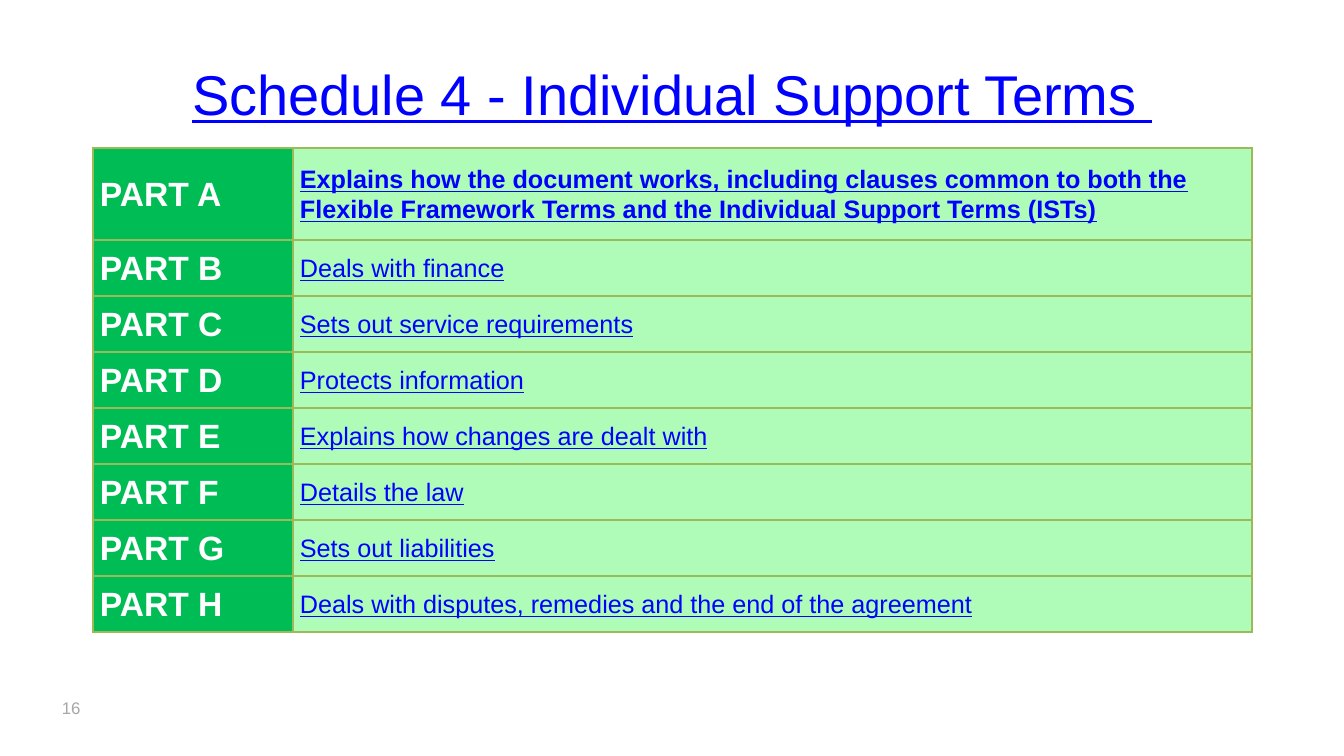
from lxml import etree
from pptx import Presentation
from pptx.dml.color import RGBColor
from pptx.enum.text import MSO_ANCHOR, PP_ALIGN
from pptx.oxml.ns import qn
from pptx.util import Pt

MIDDLE, TOP = MSO_ANCHOR.MIDDLE, MSO_ANCHOR.TOP
LEFT, CENTER = PP_ALIGN.LEFT, PP_ALIGN.CENTER

TITLE = "Schedule 4 - Individual Support Terms "
PAGE = "16"
PARTS = [
    ("PART A", "Explains how the document works, including clauses common to both "
     "the Flexible Framework Terms and the Individual Support Terms (ISTs)"),
    ("PART B", "Deals with finance"),
    ("PART C", "Sets out service requirements"),
    ("PART D", "Protects information"),
    ("PART E", "Explains how changes are dealt with"),
    ("PART F", "Details the law"),
    ("PART G", "Sets out liabilities"),
    ("PART H", "Deals with disputes, remedies and the end of the agreement"),
]
COLORS = {"link": "0000FF", "label": "FFFFFF", "page": "A6A6A6",
          "dark": "00BC55", "light": "AEFCB7", "border": "9BBB59"}
FONT = "Arial"
COLS = [200, 959]
FIRST, OTHER = 92, 56
INSET = 7


def px(n):
    return round(n * 914400 / 100.8)


def rgb(name):
    return RGBColor.from_string(COLORS[name])


def style(para, size, color, bold=False, line=False):
    font = para.font
    font.name, font.size = FONT, Pt(size)
    font.bold, font.underline = bold, line
    font.color.rgb = rgb(color)


def add_text(slide, box, text, size, color, align, anchor, line=False):
    frame = slide.shapes.add_textbox(*map(px, box)).text_frame
    frame.word_wrap = True
    frame.vertical_anchor = anchor
    para = frame.paragraphs[0]
    para.text, para.alignment = text, align
    style(para, size, color, line=line)


def add_border(cell):
    props = cell._tc.get_or_add_tcPr()
    for spot, side in enumerate(("lnL", "lnR", "lnT", "lnB")):
        edge = etree.Element(qn("a:" + side), w=str(Pt(1)))
        fill = etree.SubElement(edge, qn("a:solidFill"))
        etree.SubElement(fill, qn("a:srgbClr"), val=COLORS["border"])
        props.insert(spot, edge)


def fill_cell(cell, text, fill, size, color, bold, line):
    cell.fill.solid()
    cell.fill.fore_color.rgb = rgb(fill)
    cell.vertical_anchor = MIDDLE
    cell.margin_left = cell.margin_right = px(INSET)
    cell.margin_top = cell.margin_bottom = 0
    para = cell.text_frame.paragraphs[0]
    para.text, para.line_spacing = text, 1.06
    style(para, size, color, bold, line)
    add_border(cell)


def add_parts(slide):
    rows = [FIRST] + [OTHER] * (len(PARTS) - 1)
    box = (93, 148, sum(COLS), sum(rows))
    table = slide.shapes.add_table(len(rows), len(COLS), *map(px, box)).table
    table.first_row = table.horz_banding = False
    for col, width in zip(table.columns, COLS):
        col.width = px(width)
    for i, (label, text) in enumerate(PARTS):
        table.rows[i].height = px(rows[i])
        fill_cell(table.cell(i, 0), label, "dark", 24, "label", True, False)
        fill_cell(table.cell(i, 1), text, "light", 18, "link", i == 0, True)


def main():
    deck = Presentation()
    deck.slide_width, deck.slide_height = px(1344), px(756)
    slide = deck.slides.add_slide(deck.slide_layouts[6])
    add_text(slide, (52, 693, 221, 30), PAGE, 12, "page", LEFT, TOP)
    add_text(slide, (67, 30, 1210, 126), TITLE, 40, "link", CENTER, MIDDLE, True)
    add_parts(slide)
    deck.save("out.pptx")


if __name__ == "__main__":
    main()
